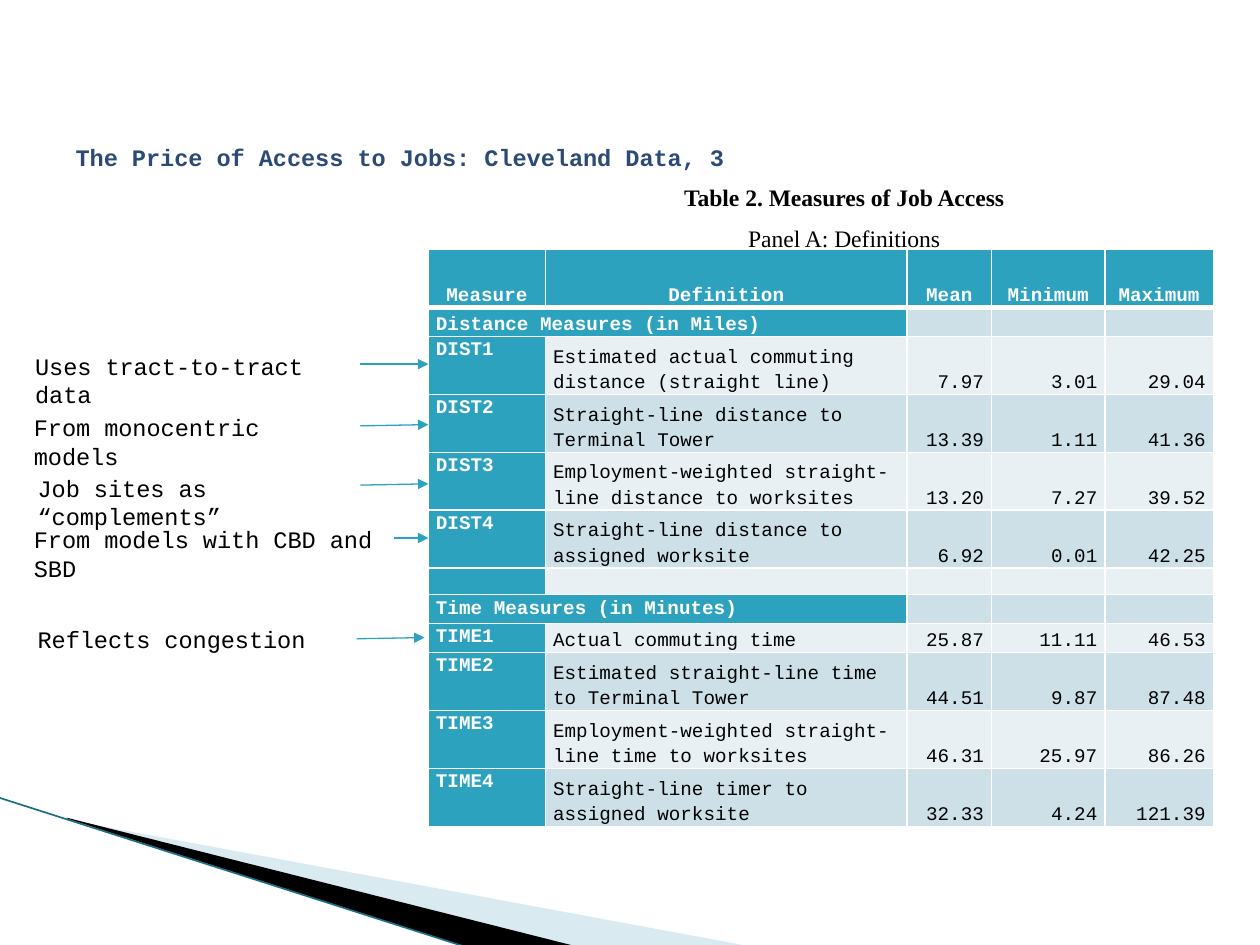
from lxml import etree
from pptx import Presentation, util as u
from pptx.dml.color import RGBColor
from pptx.enum import shapes, text
from pptx.oxml.ns import qn

TEAL, WHITE, BLACK = "2DA2BF", "FFFFFF", "000000"
BANDS = ("E8F0F4", "CDE0E8")
LEFT, CENTER, RIGHT = text.PP_ALIGN.LEFT, text.PP_ALIGN.CENTER, text.PP_ALIGN.RIGHT
TOP, MIDDLE, BOTTOM = text.MSO_ANCHOR.TOP, text.MSO_ANCHOR.MIDDLE, text.MSO_ANCHOR.BOTTOM

# Table geometry in inches
TABLE_LEFT, TABLE_TOP = 3.4, 1.98
COLUMNS = (0.93, 2.87, 0.67, 0.9, 0.86)
ONE_LINE, TWO_LINES, GAP = 0.23, 0.46, 0.21

HEADER = ("Measure", "Definition", "Mean", "Minimum", "Maximum")
# Row height and cell texts; a lone text is a section heading
ROWS = [
    (TWO_LINES, HEADER),
    (ONE_LINE, ("Distance Measures (in Miles)",)),
    (TWO_LINES, ("DIST1", "Estimated actual commuting distance (straight line)", "7.97", "3.01", "29.04")),
    (TWO_LINES, ("DIST2", "Straight-line distance to Terminal Tower", "13.39", "1.11", "41.36")),
    (TWO_LINES, ("DIST3", "Employment-weighted straight-line distance to worksites", "13.20", "7.27", "39.52")),
    (TWO_LINES, ("DIST4", "Straight-line distance to assigned worksite", "6.92", "0.01", "42.25")),
    (GAP, ()),
    (ONE_LINE, ("Time Measures (in Minutes)",)),
    (ONE_LINE, ("TIME1", "Actual commuting time", "25.87", "11.11", "46.53")),
    (TWO_LINES, ("TIME2", "Estimated straight-line time to Terminal Tower", "44.51", "9.87", "87.48")),
    (TWO_LINES, ("TIME3", "Employment-weighted straight-line time to worksites", "46.31", "25.97", "86.26")),
    (TWO_LINES, ("TIME4", "Straight-line timer to assigned worksite", "32.33", "4.24", "121.39")),
]

# Note text, box (left, top, width), arrow (from x, from y, to x, to y)
NOTES = [
    ("Uses tract-to-tract data", (0.18, 2.74, 2.68), (2.86, 2.89, 3.4, 2.89)),
    ("From monocentric models", (0.17, 3.23, 2.68), (2.86, 3.38, 3.4, 3.37)),
    ("Job sites as “complements”", (0.2, 3.71, 2.68), (2.86, 3.85, 3.4, 3.84)),
    ("From models with CBD and SBD", (0.17, 4.12, 3.11), (3.13, 4.27, 3.4, 4.27)),
    ("Reflects congestion", (0.2, 4.91, 2.68), (2.83, 5.07, 3.37, 5.06)),
]


def color(value):
    return RGBColor.from_string(value)


def inches(*values):
    return [u.Inches(value) for value in values]


def set_values(target, **values):
    for name, value in values.items():
        setattr(target, name, value)


def write(paragraph, words, size=13.5, name="Courier New", ink=BLACK, bold=False, **layout):
    set_values(paragraph, **layout)
    run = paragraph.add_run()
    run.text = words
    set_values(run.font, size=u.Pt(size), name=name, bold=bold)
    run.font.color.rgb = color(ink)


def add_text(slide, box, paragraphs):
    frame = slide.shapes.add_textbox(*inches(*box)).text_frame
    frame.word_wrap = True
    for index, values in enumerate(paragraphs):
        paragraph = frame.add_paragraph() if index else frame.paragraphs[0]
        write(paragraph, **values)


def add_line(slide, ends, ink, width, arrow=False):
    line = slide.shapes.add_connector(shapes.MSO_CONNECTOR.STRAIGHT, *inches(*ends))
    line.line.color.rgb = color(ink)
    line.line.width = u.Pt(width)
    if arrow:
        etree.SubElement(line.line._get_or_add_ln(), qn("a:tailEnd"), type="triangle")
    etree.SubElement(line._element.spPr, qn("a:effectLst"))


def add_wedge(slide, points, fill, alpha=100):
    """Draw a closed outline; points are in hundredths of an inch."""
    builder = slide.shapes.build_freeform(*points[0], scale=u.Inches(0.01))
    builder.add_line_segments(points[1:], close=True)
    wedge = builder.convert_to_shape()
    wedge.shadow.inherit = False
    wedge.fill.solid()
    wedge.fill.fore_color.rgb = color(fill)
    wedge.line.fill.background()
    if alpha < 100:
        solid = wedge._element.spPr.find(qn("a:solidFill"))
        etree.SubElement(solid[0], qn("a:alpha"), val=str(alpha * 1000))


def set_borders(cell, bottom):
    properties = cell._tc.get_or_add_tcPr()
    sides = {"lnL": 1, "lnR": 1, "lnT": 1, "lnB": bottom}
    for index, (side, width) in enumerate(sides.items()):
        line = etree.Element(qn("a:" + side), w=str(u.Pt(width)))
        fill = etree.SubElement(line, qn("a:solidFill"))
        etree.SubElement(fill, qn("a:srgbClr"), val=WHITE)
        properties.insert(index, line)


def fill_cell(cell, words, fill, heading, align, anchor, bottom=1):
    set_values(cell, margin_left=u.Inches(0.06), margin_right=u.Inches(0.06),
               margin_top=0, margin_bottom=0, vertical_anchor=anchor)
    cell.fill.solid()
    cell.fill.fore_color.rgb = color(fill)
    set_borders(cell, bottom)
    paragraph = cell.text_frame.paragraphs[0]
    if words:
        write(paragraph, words, size=11, ink=WHITE if heading else BLACK, bold=heading,
              alignment=align, line_spacing=1.15)
    else:
        paragraph._p.get_or_add_endParaRPr().set("sz", "1100")


def add_measures_table(slide):
    heights = [height for height, _ in ROWS]
    box = inches(TABLE_LEFT, TABLE_TOP, sum(COLUMNS), sum(heights))
    table = slide.shapes.add_table(len(ROWS), len(COLUMNS), *box).table
    for column, width in zip(table.columns, COLUMNS):
        column.width = u.Inches(width)
    for r, (height, words) in enumerate(ROWS):
        table.rows[r].height = u.Inches(height)
        section = len(words) == 1
        if section:
            table.cell(r, 0).merge(table.cell(r, 1))
        for c in range(len(COLUMNS)):
            header = r == 0
            heading = header or c == 0 or (section and c == 1)
            align = CENTER if header else RIGHT if c > 1 else LEFT
            anchor = TOP if c == 0 and r > 1 else BOTTOM
            fill_cell(table.cell(r, c), words[c] if c < len(words) else "",
                      TEAL if heading else BANDS[r % 2], heading, align, anchor,
                      bottom=3 if header else 1)


def set_title(slide, words):
    title = slide.shapes.title
    left, top, width, height = inches(0.5, 1.05, 9, 0.7)
    set_values(title, left=left, top=top, width=width, height=height)
    # The deep bottom margin lifts the line into the upper half
    set_values(title.text_frame, vertical_anchor=MIDDLE, word_wrap=True,
               margin_bottom=u.Inches(0.35))
    write(title.text_frame.paragraphs[0], words, ink="2B4A76", bold=True, alignment=LEFT)


def main():
    presentation = Presentation()
    presentation.slide_width, presentation.slide_height = inches(10, 7.5)
    slide = presentation.slides.add_slide(presentation.slide_layouts[5])

    # Corner decoration
    add_wedge(slide, [(55, 651), (595, 751), (456, 751), (55, 650)], "A0CBDC", alpha=40)
    add_wedge(slide, [(53, 649), (457, 751), (372, 752), (54, 650)], BLACK)
    add_line(slide, (-0.01, 6.33, 3.71, 7.52), "1B6F83", 0.95)

    # Title, table and caption
    set_title(slide, "The Price of Access to Jobs: Cleveland Data, 3")
    add_measures_table(slide)
    caption = dict(name="Times New Roman", alignment=CENTER, line_spacing=1.15)
    add_text(slide, (4.2, 1.37, 5, 0.69), [
        dict(caption, words="Table 2. Measures of Job Access", bold=True),
        dict(caption, words="Panel A: Definitions", space_before=u.Pt(4.5)),
    ])

    # Notes pointing at the rows
    for words, box, arrow in NOTES:
        add_text(slide, (*box, 0.33), [dict(words=words)])
        add_line(slide, arrow, TEAL, 0.75, arrow=True)

    presentation.save("out.pptx")


if __name__ == "__main__":
    main()
